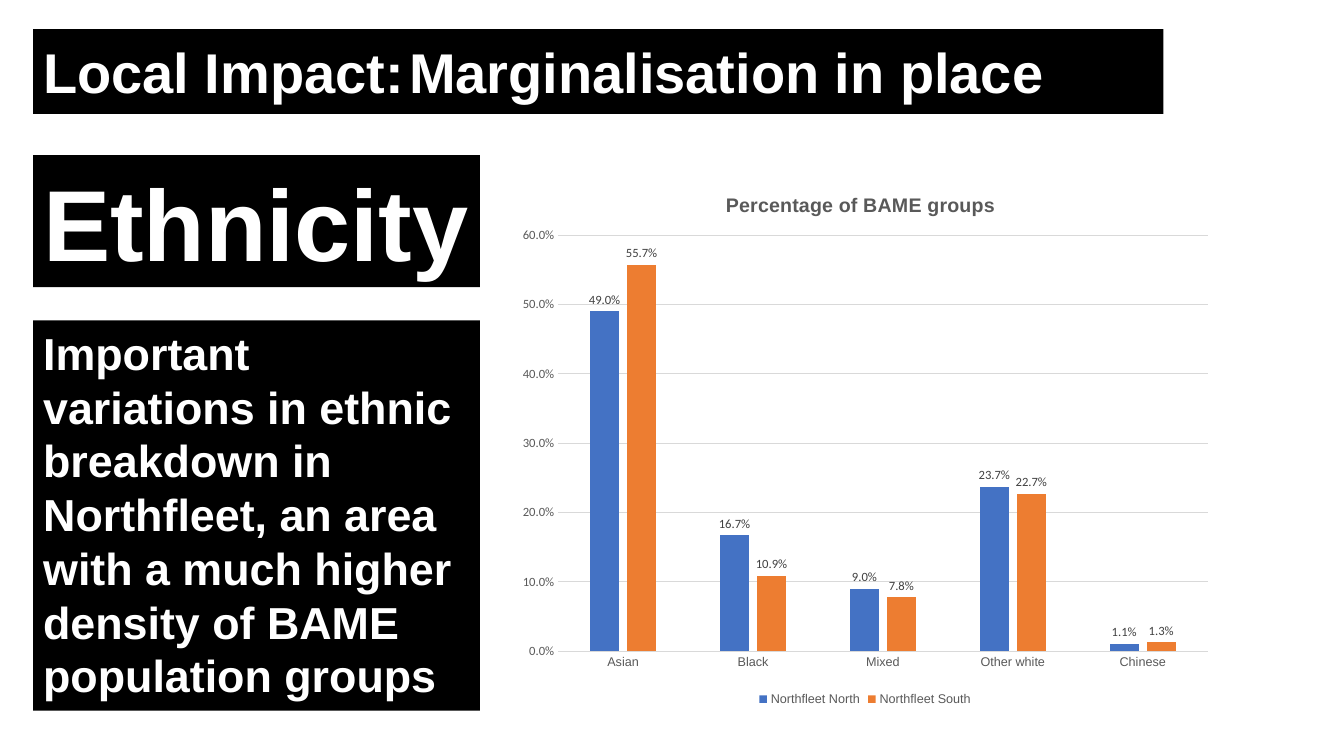
from lxml import etree
from pptx import Presentation
from pptx import util as u
from pptx.chart.data import CategoryChartData
from pptx.dml.color import RGBColor
from pptx.enum import chart as ch, shapes, text
from pptx.oxml.ns import qn

HUES = {"ink": "000000", "paper": "FFFFFF", "north": "4472C4",
        "south": "ED7D31", "grey": "595959", "label": "404040", "grid": "D9D9D9"}
GROUPS = ["Asian", "Black", "Mixed", "Other white", "Chinese"]
SHARES = {"Northfleet North": ("north", [0.49, 0.167, 0.09, 0.237, 0.011]),
          "Northfleet South": ("south", [0.557, 0.109, 0.078, 0.227, 0.013])}


def hue(name):
    return RGBColor.from_string(HUES[name])


def style(font, size, color, face="Arial", bold=False):
    font.size, font.name, font.bold = u.Pt(size), face, bold
    font.color.rgb = hue(color)


def write(frame, words, **form):
    para = frame.paragraphs[0]
    run = para.add_run()
    run.text = words
    style(run.font, **form)
    return para


def place(node, index, **spots):
    for old in node.findall(qn("c:layout")):
        node.remove(old)
    layout = etree.Element(qn("c:layout"))
    manual = etree.SubElement(layout, qn("c:manualLayout"))
    if "w" in spots:
        etree.SubElement(manual, qn("c:layoutTarget")).set("val", "inner")
    for mode in ("xMode", "yMode"):
        etree.SubElement(manual, qn("c:" + mode)).set("val", "edge")
    for key, value in spots.items():
        etree.SubElement(manual, qn("c:" + key)).set("val", str(value))
    node.insert(index, layout)


class Board:
    face, thin = "Arial", u.Pt(0.75)

    def __init__(self, deck):
        self.slide = deck.slides.add_slide(deck.slide_layouts[6])

    def panel(self, words, spot, size, home=None, anchor="TOP"):
        home = home or self.slide.shapes
        box = home.add_shape(shapes.MSO_SHAPE.RECTANGLE, *map(u.Inches, spot))
        box.shadow.inherit = False
        box.fill.solid()
        box.fill.fore_color.rgb = hue("ink")
        box.line.fill.background()
        frame = box.text_frame
        frame.word_wrap = True
        frame.vertical_anchor = getattr(text.MSO_ANCHOR, anchor)
        para = write(frame, words, size=size, color="paper", face=self.face, bold=True)
        para.alignment = text.PP_ALIGN.LEFT

    def header(self, parts):
        home = self.slide.shapes.add_group_shape().shapes
        for words, left, width in parts:
            self.panel(words, (left, 0.29, width, 0.84), 40, home, "MIDDLE")

    def axis(self, axis, face):
        axis.major_tick_mark = axis.minor_tick_mark = ch.XL_TICK_MARK.NONE
        style(axis.tick_labels.font, 9, "grey", face)

    def columns(self, title, spot):
        data = CategoryChartData(number_format="0.0%")
        data.categories = GROUPS
        for name, (_, values) in SHARES.items():
            data.add_series(name, values)
        chart = self.slide.shapes.add_chart(
            ch.XL_CHART_TYPE.COLUMN_CLUSTERED, *map(u.Inches, spot), data).chart
        style(chart.font, 10, "ink", "Calibri")
        chart.has_title = True
        write(chart.chart_title.text_frame, title, size=14, color="grey", bold=True)
        place(chart.chart_title.element, 1, x=0.3, y=0.04)
        place(chart.element.find(".//" + qn("c:plotArea")), 0, x=0.07, y=0.125, w=0.91, h=0.766)

        chart.has_legend = True
        chart.legend.position = ch.XL_LEGEND_POSITION.BOTTOM
        chart.legend.include_in_layout = False
        style(chart.legend.font, 9, "grey")

        cats, vals = chart.category_axis, chart.value_axis
        self.axis(cats, self.face)
        self.axis(vals, "Calibri")
        vals.minimum_scale, vals.maximum_scale, vals.major_unit = 0, 0.6, 0.1
        vals.tick_labels.number_format = "0.0%"
        vals.tick_labels.number_format_is_linked = False
        vals.format.line.fill.background()
        for line in (cats.format.line, vals.major_gridlines.format.line):
            line.width = self.thin
            line.color.rgb = hue("grid")

        plot = chart.plots[0]
        plot.gap_width, plot.overlap, plot.vary_by_categories = 219, -27, False
        for series, (color, _) in zip(plot.series, SHARES.values()):
            series.format.fill.solid()
            series.format.fill.fore_color.rgb = hue(color)
            labels = series.data_labels
            labels.show_value = True
            labels.number_format = "0.0%"
            labels.number_format_is_linked = False
            labels.position = ch.XL_LABEL_POSITION.OUTSIDE_END
            style(labels.font, 9, "label", "Calibri")


def main():
    deck = Presentation()
    deck.slide_width, deck.slide_height = u.Inches(13.33), u.Inches(7.5)
    board = Board(deck)
    board.panel("Ethnicity", (0.33, 1.54, 4.43, 1.31), 72)
    board.panel("Important variations in ethnic breakdown in Northfleet, an area with "
                "a much higher density of BAME population groups",
                (0.33, 3.18, 4.43, 3.87), 32)
    board.columns("Percentage of BAME groups", (5.04, 1.66, 7.08, 5.39))
    board.header([("Local Impact:", 0.33, 3.84), ("Marginalisation in place", 3.96, 7.58)])
    deck.save("out.pptx")


if __name__ == "__main__":
    main()
